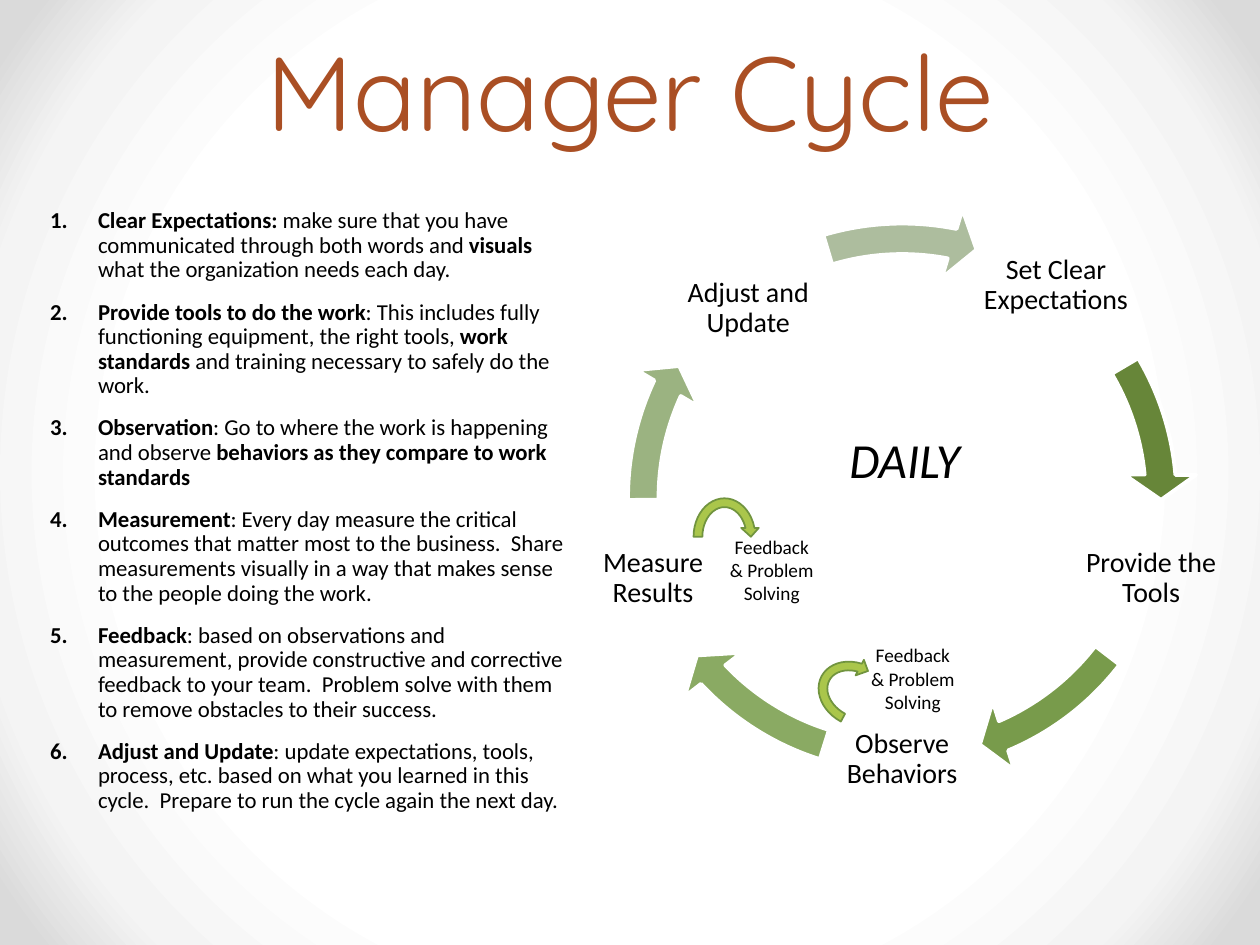
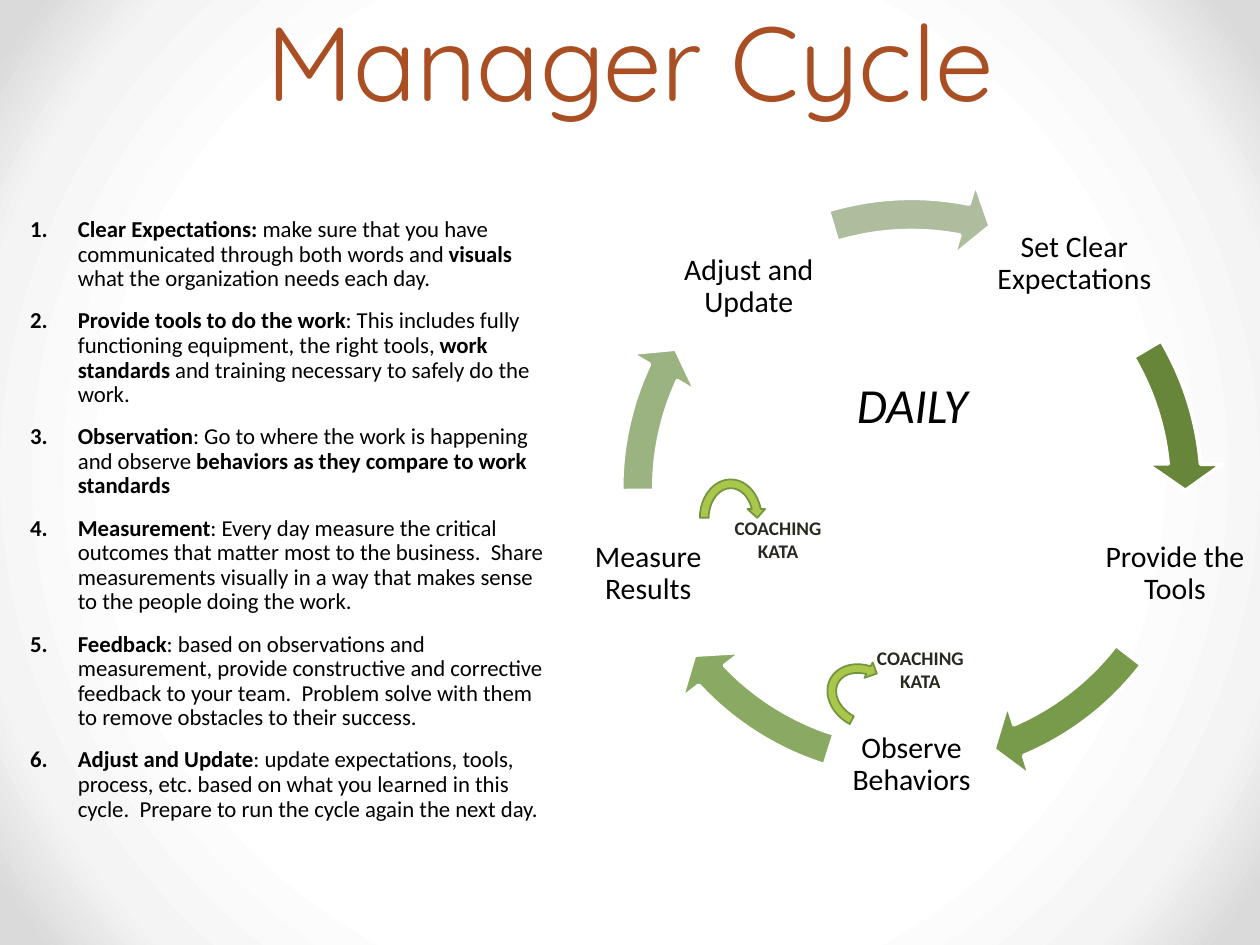
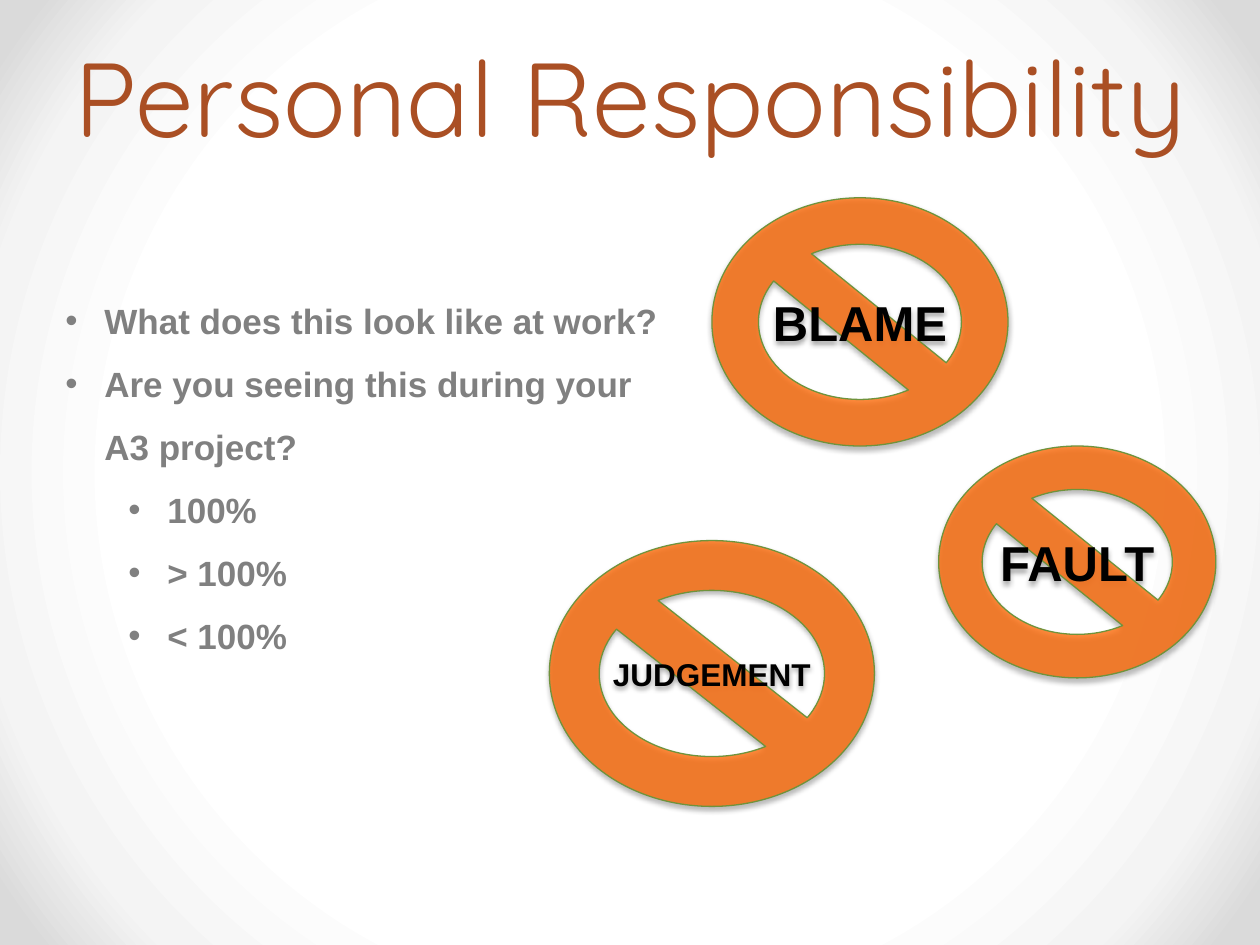
import math
from dataclasses import dataclass
from lxml import etree
from pptx import Presentation
from pptx import util as u
from pptx.dml.color import RGBColor
from pptx.enum import shapes, text
from pptx.oxml.ns import qn


@dataclass(frozen=True)
class Theme:
    title_font: str = "Quicksand"
    cycle_font: str = "Calibri"
    plain_font: str = "Arial"
    rust: str = "AA4F24"
    black: str = "000000"
    coal: str = "28291F"
    gray: str = "808080"
    white: str = "FFFFFF"
    lime: str = "AAC64B"
    lime_edge: str = "71943F"
    sign: str = "FF6600"
    sign_edge: str = "6F933C"
    greens: tuple = ("678639", "789B4B", "8AAA63", "9BB381", "ADBD9E")
    backdrop: tuple = ((64, "FFFFFF"), (84, "F4F4F4"), (96, "DADADA"))
    title_size: int = 60
    title_line: int = 58
    big: int = 28
    bullet: int = 20
    step: int = 13
    note: int = 11


T = Theme()
prs = Presentation()
prs.slide_width, prs.slide_height = u.Inches(10), u.Inches(7.5)
COL, ROW = prs.slide_width / 100, prs.slide_height / 75  # square grid cells


def cells(left, top, width, height):
    return [round(n * unit) for n, unit in
            ((left, COL), (top, ROW), (width, COL), (height, ROW))]


def write(tf, lines, font, size, color, bold=False, italic=False,
          align=text.PP_ALIGN.CENTER, anchor=text.MSO_ANCHOR.TOP, spacing=None):
    """Fill a frame; a | in a line switches bold on and off."""
    tf.word_wrap = True
    tf.vertical_anchor = anchor
    for i, line in enumerate(lines):
        p = tf.paragraphs[0] if i == 0 else tf.add_paragraph()
        p.alignment = align
        p.line_spacing = spacing
        for k, piece in enumerate(line.split("|")):
            r = p.add_run()
            r.text = piece
            r.font.name, r.font.size = font, u.Pt(size)
            r.font.bold, r.font.italic = bold and k % 2 == 0, italic
            r.font.color.rgb = RGBColor.from_string(color)


# Shared backdrop: round gradient on the master
fill = prs.slide_master.background.fill
fill.gradient()
grad = prs.slide_master.element.find(".//" + qn("p:bg")).find(".//" + qn("a:gradFill"))
for child in list(grad):
    grad.remove(child)
stops = etree.SubElement(grad, qn("a:gsLst"))
for pos, color in T.backdrop:
    gs = etree.SubElement(stops, qn("a:gs"), pos=str(pos * 1000))
    etree.SubElement(gs, qn("a:srgbClr"), val=color)
path = etree.SubElement(grad, qn("a:path"), path="circle")
etree.SubElement(path, qn("a:fillToRect"), {side: "50000" for side in "ltrb"})

# Slides and titles
slides = []
for title, box in (("Manager Cycle", (5, 2.4, 90, 10.2)),
                   ("Manager Cycle", (0, 0, 100, 10.2)),
                   ("Personal Responsibility", (0, 2.9, 100, 10.2))):
    s = prs.slides.add_slide(prs.slide_layouts[6])
    tf = s.shapes.add_textbox(*cells(*box)).text_frame
    write(tf, [title], T.title_font, T.title_size, T.rust,
          anchor=text.MSO_ANCHOR.BOTTOM, spacing=u.Pt(T.title_line))
    slides.append(s)

# Manager cycle: content of both versions
STEPS = [
    "Clear Expectations: |make sure that you have communicated through both words and "
    "|visuals| what the organization needs each day.",
    "Provide tools to do the work|: This includes fully functioning equipment, the right "
    "tools, |work standards |and training necessary to safely do the work.",
    "Observation|: Go to where the work is happening and observe "
    "|behaviors as they compare to work standards",
    "Measurement|: Every day measure the critical outcomes that matter most to the "
    "business.  Share measurements visually in a way that makes sense to the people "
    "doing the work.",
    "Feedback|: based on observations and measurement, provide constructive and "
    "corrective feedback to your team.  Problem solve with them to remove obstacles "
    "to their success.",
    "Adjust and Update|: update expectations, tools, process, etc. based on what you "
    "learned in this cycle.  Prepare to run the cycle again the next day.",
]
LABELS = ["Set Clear Expectations", "Provide the Tools", "Observe Behaviors",
          "Measure Results", "Adjust and Update"]
ARCS = [(329.42, 354.91), (37.53, 66.94), (107.47, 136.88),
        (179.5, 204.99), (253.29, 281.12)]  # start and end in degrees
DEGREE = 0.6  # one degree in adjustment units
CYCLES = [
    dict(steps=(3, 16.1), ring=(48.2, 16.1, 46.8), size=16, daily=(60.3, 33.6),
         note="Feedback & Problem Solving", note_rows=6.6, note_color=T.black,
         note_bold=False, notes=[(56.7, 42), (67.9, 50.6)],
         loops=[(54.7, 39.2, 0), (65.1, 51.7, 298.2)]),
    dict(steps=(1.4, 16.8), ring=(47.6, 14, 49.5), size=17, daily=(60.9, 29.2),
         note="COACHING KATA", note_rows=4.7, note_color=T.coal,
         note_bold=True, notes=[(57.2, 40.5), (68.5, 50.8)],
         loops=[(55.2, 37.7, 0), (65.8, 51.9, 298.2)]),
]

for s, c in zip(slides, CYCLES):
    # Numbered steps
    tf = s.shapes.add_textbox(*cells(*c["steps"], 43, 52)).text_frame
    write(tf, STEPS, T.cycle_font, T.step, T.black, bold=True,
          align=text.PP_ALIGN.LEFT, spacing=0.9)
    for i, p in enumerate(tf.paragraphs):
        pPr = p._p.get_or_add_pPr()
        pPr.set("marL", str(u.Inches(0.38)))
        pPr.set("indent", str(-u.Inches(0.38)))
        etree.SubElement(pPr, qn("a:buFont"), typeface="+mj-lt")
        etree.SubElement(pPr, qn("a:buAutoNum"), type="arabicPeriod")
        if i:
            p.space_before = u.Pt(10)

    # Ring: five labels 72 degrees apart, an arrow after each
    left, top, ring = c["ring"]
    side, radius = ring * 0.267, ring * 0.444
    for i, (label, (start, end), green) in enumerate(zip(LABELS, ARCS, T.greens)):
        angle = math.radians(72 * i - 54)
        x = left + ring / 2 + radius * math.cos(angle) - side / 2
        y = top + ring / 2 + radius * math.sin(angle) - side / 2
        tf = s.shapes.add_textbox(*cells(x, y, side, side)).text_frame
        tf.margin_left = tf.margin_right = tf.margin_top = tf.margin_bottom = u.Inches(0.02)
        if label == LABELS[-1]:
            tf.margin_top = u.Inches(0.38)  # the last label sits lower
        write(tf, [label], T.cycle_font, c["size"], T.black,
              anchor=text.MSO_ANCHOR.MIDDLE, spacing=0.9)

        sp = s.shapes.add_shape(shapes.MSO_SHAPE.CIRCULAR_ARROW, *cells(left, top, ring, ring))
        values = (5.2 / 100, 5.59 * DEGREE, end * DEGREE, start * DEGREE, 6.1 / 100)
        for k, value in enumerate(values):
            sp.adjustments[k] = value
        sp.shadow.inherit = False
        sp.fill.solid()
        sp.fill.fore_color.rgb = RGBColor.from_string(green)
        sp.line.color.rgb = RGBColor.from_string(T.white)
        sp.line.width = u.Pt(2.25)

    # Centre word
    tf = s.shapes.add_textbox(*cells(*c["daily"], 23, 5.7)).text_frame
    write(tf, ["DAILY"], T.cycle_font, T.big, T.black, italic=True)

    # Small loops and their notes
    for (x, y, turn), note_at in zip(c["loops"], c["notes"]):
        sp = s.shapes.add_shape(shapes.MSO_SHAPE.CIRCULAR_ARROW, *cells(x, y, 5.6, 6.8))
        sp.rotation = turn
        sp.shadow.inherit = False
        sp.fill.solid()
        sp.fill.fore_color.rgb = RGBColor.from_string(T.lime)
        sp.line.color.rgb = RGBColor.from_string(T.lime_edge)
        sp.line.width = u.Pt(1)
        tf = s.shapes.add_textbox(*cells(*note_at, 9.1, c["note_rows"])).text_frame
        write(tf, [c["note"]], T.cycle_font, T.note, c["note_color"], bold=c["note_bold"])

# Personal responsibility: questions
s = slides[2]
QUESTIONS = [("What does this look like at work?", 0),
             ("Are you seeing this during your A3 project?", 0),
             ("100%", 1), ("> 100%", 1), ("< 100%", 1)]
tf = s.shapes.add_textbox(*cells(4.2, 21.6, 49.4, 30.7)).text_frame
write(tf, [q for q, _ in QUESTIONS], T.plain_font, T.bullet, T.gray, bold=True,
      align=text.PP_ALIGN.LEFT, spacing=1.5)
for p, (_, level) in zip(tf.paragraphs, QUESTIONS):
    p.level = level
    pPr = p._p.get_or_add_pPr()
    pPr.set("marL", str(u.Inches(0.31 + 0.5 * level)))
    pPr.set("indent", str(-u.Inches(0.31)))
    etree.SubElement(pPr, qn("a:buFont"), typeface=T.plain_font)
    etree.SubElement(pPr, qn("a:buChar"), char="•")

# Prohibition signs
for word, size, box in (("BLAME", T.big, (56.5, 15.7, 23.5, 19.7)),
                        ("FAULT", T.big, (74.5, 35.4, 22, 18.4)),
                        ("JUDGEMENT", 18, (43.6, 42.9, 25.8, 21.1))):
    sp = s.shapes.add_shape(shapes.MSO_SHAPE.NO_SYMBOL, *cells(*box))
    sp.fill.solid()
    sp.fill.fore_color.rgb = RGBColor.from_string(T.sign)
    tint = sp._element.spPr.find(".//" + qn("a:srgbClr"))
    etree.SubElement(tint, qn("a:alpha"), val="76000")
    sp.line.color.rgb = RGBColor.from_string(T.sign_edge)
    sp.line.width = u.Pt(0.75)
    sp.shadow.inherit = False
    effects = sp._element.spPr.find(qn("a:effectLst"))
    shadow = etree.SubElement(effects, qn("a:outerShdw"), blurRad=str(u.Pt(3.1)),
                              dist=str(u.Pt(1.8)), dir=str(90 * 60000), rotWithShape="0")
    shade = etree.SubElement(shadow, qn("a:srgbClr"), val=T.black)
    etree.SubElement(shade, qn("a:alpha"), val="35000")
    write(sp.text_frame, [word], T.plain_font, size, T.black, bold=True,
          anchor=text.MSO_ANCHOR.MIDDLE)

prs.save("out.pptx")
